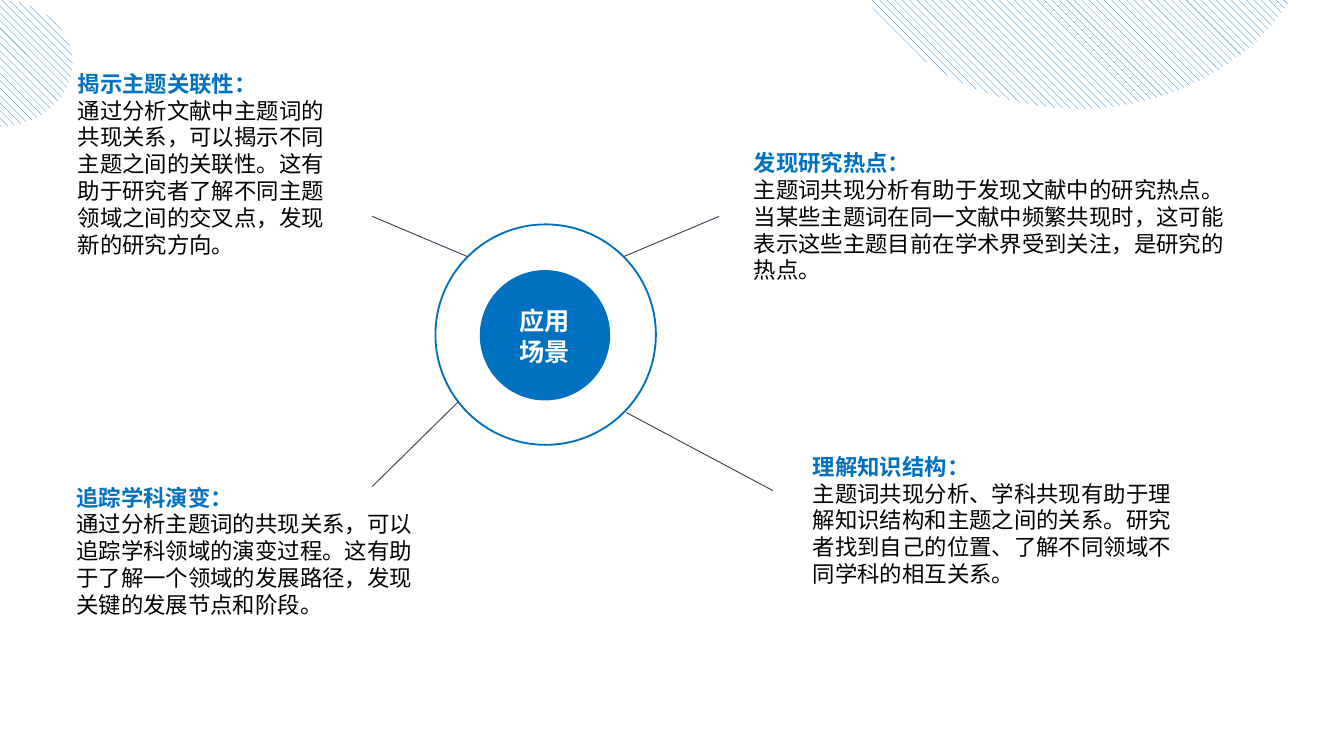
import pptx
import pptx.util
import pptx.dml.color
import pptx.enum.dml
import pptx.enum.shapes
import pptx.enum.text
import pptx.oxml
import pptx.oxml.ns

Inches = pptx.util.Inches
Pt = pptx.util.Pt
RGB = pptx.dml.color.RGBColor.from_string
qn = pptx.oxml.ns.qn
OVAL = pptx.enum.shapes.MSO_SHAPE.OVAL

COLORS = {"blue": "0070C0", "white": "FFFFFF", "black": "000000", "spoke": "414455"}
CJK = "Noto Sans CJK SC"


def add_oval(left, top, width, height):
    oval = slide.shapes.add_shape(OVAL, Inches(left), Inches(top), Inches(width), Inches(height))
    oval.shadow.inherit = False
    oval.line.fill.background()
    return oval


def style_paragraph(paragraph, size, color, bold, latin, spacing):
    paragraph.line_spacing = Pt(spacing)
    for run in paragraph.runs:
        run.font.size = Pt(size)
        run.font.bold = bold
        run.font.color.rgb = RGB(COLORS[color])
        run.font.name = latin
        east_asian = pptx.oxml.parse_xml(
            f'<a:ea {pptx.oxml.ns.nsdecls("a")} typeface="{CJK}"/>')
        run.font._element.append(east_asian)


prs = pptx.Presentation()
prs.slide_width = Inches(10)
prs.slide_height = prs.slide_width * 9 // 16
slide = prs.slides.add_slide(prs.slide_layouts[6])

for bounds in [(-0.55, 0, 1.09, 0.94), (6.24, -2.27, 3.57, 3.08)]:
    hatched = add_oval(*bounds)
    hatched.fill.patterned()
    hatched.fill.pattern = pptx.enum.dml.MSO_PATTERN.WIDE_DOWNWARD_DIAGONAL
    hatched.fill.fore_color.rgb = RGB(COLORS["blue"])
    hatched.fill.back_color.rgb = RGB(COLORS["white"])

hub = add_oval(3.57, 2.01, 0.97, 0.97)
hub.fill.solid()
hub.fill.fore_color.rgb = RGB(COLORS["blue"])
hub.text_frame.text = "应用场景"
hub.text_frame.word_wrap = True
hub.text_frame.vertical_anchor = pptx.enum.text.MSO_ANCHOR.MIDDLE
hub_label = hub.text_frame.paragraphs[0]
hub_label.alignment = pptx.enum.text.PP_ALIGN.CENTER
style_paragraph(hub_label, 13.5, "white", True, CJK, 16.5)

ring = add_oval(3.24, 1.67, 1.64, 1.64)
ring.fill.background()
ring.line.color.rgb = RGB(COLORS["blue"])
ring.line.width = Pt(1)

spokes = [
    (2.77, 1.61, 3.48, 1.91),
    (4.64, 1.91, 5.35, 1.61),
    (2.77, 3.62, 3.41, 2.99),
    (5.75, 3.65, 4.66, 3.07),
]
for ends in spokes:
    spoke = slide.shapes.add_connector(
        pptx.enum.shapes.MSO_CONNECTOR.STRAIGHT, *[Inches(value) for value in ends])
    spoke.line.color.rgb = RGB(COLORS["spoke"])
    spoke.line.width = Pt(0.5)
    properties = spoke._element.spPr
    properties.append(properties.makeelement(qn("a:effectLst"), {}))

scenarios = [
    ((0.48, 0.47, 2.13, 1.51), "揭示主题关联性：",
     "通过分析文献中主题词的共现关系，可以揭示不同主题之间的关联性。"
     "这有助于研究者了解不同主题领域之间的交叉点，发现新的研究方向。"),
    ((5.51, 1.06, 3.77, 1.11), "发现研究热点：",
     "主题词共现分析有助于发现文献中的研究热点。"
     "当某些主题词在同一文献中频繁共现时，这可能表示这些主题目前在学术界受到关注，是研究的热点。"),
    ((0.47, 3.55, 2.76, 1.11), "追踪学科演变：",
     "通过分析主题词的共现关系，可以追踪学科领域的演变过程。"
     "这有助于了解一个领域的发展路径，发现关键的发展节点和阶段。"),
    ((5.95, 3.32, 2.93, 1.11), "理解知识结构：",
     "主题词共现分析、学科共现有助于理解知识结构和主题之间的关系。"
     "研究者找到自己的位置、了解不同领域不同学科的相互关系。"),
]
for bounds, heading, description in scenarios:
    scenario = slide.shapes.add_textbox(*[Inches(value) for value in bounds]).text_frame
    scenario.word_wrap = True
    scenario.auto_size = pptx.enum.text.MSO_AUTO_SIZE.SHAPE_TO_FIT_TEXT
    scenario.text = f"{heading}\n{description}"
    style_paragraph(scenario.paragraphs[0], 12, "blue", True, "Arial", 14.4)
    style_paragraph(scenario.paragraphs[1], 12, "black", False, CJK, 14.4)

prs.save("out.pptx")
